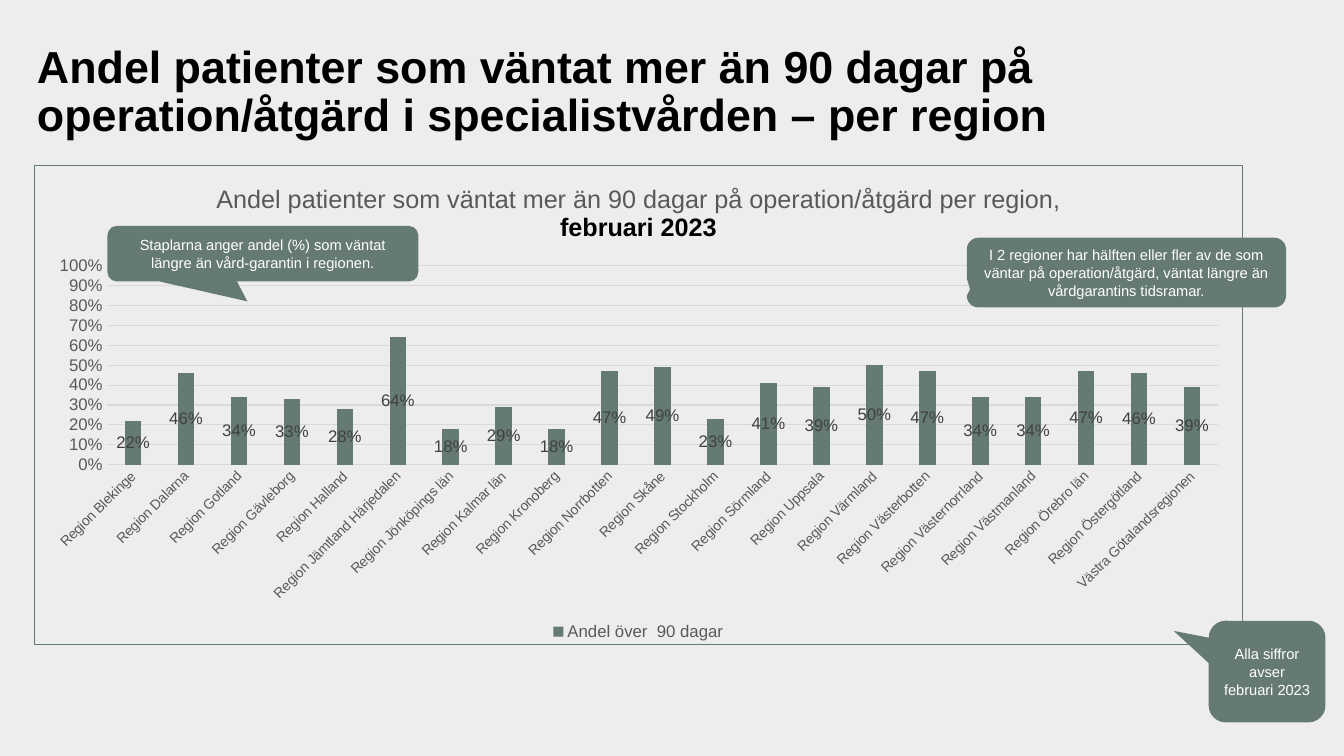
from dataclasses import dataclass

from lxml.etree import SubElement
from pptx import Presentation
from pptx.chart.chart import Chart
from pptx.chart.data import CategoryChartData
from pptx.dml.color import RGBColor
from pptx.enum.chart import XL_CHART_TYPE, XL_LABEL_POSITION, XL_LEGEND_POSITION, XL_TICK_MARK
from pptx.enum.shapes import MSO_SHAPE
from pptx.enum.text import MSO_ANCHOR, PP_ALIGN
from pptx.oxml import parse_xml
from pptx.oxml.ns import nsdecls, qn
from pptx.slide import Slide
from pptx.util import Inches, Pt

COLORS = {
    "background": "EDEDED", "green": "657B71", "grid": "D9D9D9", "axis": "595959",
    "label": "404040", "black": "000000", "white": "FFFFFF",
}
FONT = "Arial"
COLUMNS, ROWS = 160, 90
CELL = Inches(7.5) / ROWS

REGION_SHARES = {
    "Region Blekinge": 0.22, "Region Dalarna": 0.46, "Region Gotland": 0.34,
    "Region Gävleborg": 0.33, "Region Halland": 0.28, "Region Jämtland Härjedalen": 0.64,
    "Region Jönköpings län": 0.18, "Region Kalmar län": 0.29, "Region Kronoberg": 0.18,
    "Region Norrbotten": 0.47, "Region Skåne": 0.49, "Region Stockholm": 0.23,
    "Region Sörmland": 0.41, "Region Uppsala": 0.39, "Region Värmland": 0.5,
    "Region Västerbotten": 0.47, "Region Västernorrland": 0.34, "Region Västmanland": 0.34,
    "Region Örebro län": 0.47, "Region Östergötland": 0.46, "Västra Götalandsregionen": 0.39,
}


@dataclass(frozen=True)
class Box:
    """A place on the slide in grid columns and rows."""
    column: float
    row: float
    width: float
    height: float

    def lengths(self) -> list[int]:
        return [round(value * CELL) for value in (self.column, self.row, self.width, self.height)]


@dataclass(frozen=True)
class Callout:
    box: Box
    tip: tuple[float, float]
    text: str


CALLOUTS = [
    Callout(Box(143.9, 73.9, 13.9, 12.1), (-0.8, -0.4), "Alla siffror avser februari 2023"),
    Callout(Box(115.1, 28.3, 38, 8.3), (-0.49, 0.24),
            "I 2 regioner har hälften eller fler av de som väntar på operation/åtgärd, "
            "väntat längre än vårdgarantins tidsramar."),
    Callout(Box(12.8, 26.9, 37, 6.6), (-0.05, 0.86),
            "Staplarna anger andel (%) som väntat längre än vård-garantin i regionen."),
]


def color(name: str) -> RGBColor:
    return RGBColor.from_string(COLORS[name])


def style_font(font, size: float, color_name: str, bold: bool = False) -> None:
    font.name, font.size, font.bold = FONT, Pt(size), bold
    font.color.rgb = color(color_name)


def add_run(paragraph, text: str, size: float, color_name: str, bold: bool = False) -> None:
    run = paragraph.add_run()
    run.text = text
    style_font(run.font, size, color_name, bold)


def add_title(slide: Slide, box: Box, text: str) -> None:
    frame = slide.shapes.add_textbox(*box.lengths()).text_frame
    frame.word_wrap = True
    frame.vertical_anchor = MSO_ANCHOR.BOTTOM
    frame.margin_left = frame.margin_right = frame.margin_top = frame.margin_bottom = 0
    paragraph = frame.paragraphs[0]
    paragraph.line_spacing = 0.9
    add_run(paragraph, text, 32, "black", bold=True)


def add_callout(slide: Slide, callout: Callout) -> None:
    shape = slide.shapes.add_shape(MSO_SHAPE.ROUNDED_RECTANGULAR_CALLOUT, *callout.box.lengths())
    shape.adjustments[0], shape.adjustments[1] = callout.tip
    shape.shadow.inherit = False
    shape.fill.solid()
    shape.fill.fore_color.rgb = color("green")
    shape.line.fill.background()
    frame = shape.text_frame
    frame.word_wrap = True
    frame.vertical_anchor = MSO_ANCHOR.MIDDLE
    paragraph = frame.paragraphs[0]
    paragraph.alignment = PP_ALIGN.CENTER
    add_run(paragraph, callout.text, 10.5, "white")


def add_border(chart: Chart) -> None:
    border = parse_xml(
        f'<c:spPr {nsdecls("c", "a")}><a:noFill/><a:ln w="{Pt(0.75)}"><a:solidFill>'
        f'<a:srgbClr val="{COLORS["green"]}"/></a:solidFill></a:ln></c:spPr>')
    chart._chartSpace.find(qn("c:chart")).addnext(border)


def place_plot(chart: Chart, shares: dict[str, float]) -> None:
    plot_area = chart._chartSpace.find(qn("c:chart")).find(qn("c:plotArea"))
    for layout in plot_area.findall(qn("c:layout")):
        plot_area.remove(layout)
    layout = parse_xml(f'<c:layout {nsdecls("c")}/>')
    manual = SubElement(layout, qn("c:manualLayout"))
    settings = {"layoutTarget": "inner", "xMode": "edge", "yMode": "edge", **shares}
    for tag, value in settings.items():
        SubElement(manual, qn(f"c:{tag}")).set("val", str(value))
    plot_area.insert(0, layout)


def style_axes(chart: Chart) -> None:
    category_axis, value_axis = chart.category_axis, chart.value_axis
    for axis, size in ((category_axis, 10), (value_axis, 12)):
        axis.major_tick_mark = axis.minor_tick_mark = XL_TICK_MARK.NONE
        style_font(axis.tick_labels.font, size, "axis")
    value_axis.minimum_scale, value_axis.maximum_scale, value_axis.major_unit = 0, 1, 0.1
    value_axis.tick_labels.number_format = "0%"
    value_axis.tick_labels.number_format_is_linked = False
    value_axis.format.line.fill.background()
    for line in (category_axis.format.line, value_axis.major_gridlines.format.line):
        line.color.rgb = color("grid")
        line.width = Pt(0.75)
    body = category_axis._element.find(qn("c:txPr")).find(qn("a:bodyPr"))
    body.set("rot", str(-45 * 60000))
    body.set("vert", "horz")


def add_region_chart(slide: Slide, box: Box) -> None:
    data = CategoryChartData(number_format="0%")
    data.categories = list(REGION_SHARES)
    data.add_series("Andel över  90 dagar", list(REGION_SHARES.values()))
    chart = slide.shapes.add_chart(XL_CHART_TYPE.COLUMN_CLUSTERED, *box.lengths(), data).chart
    style_font(chart.font, 12, "black")

    # Chart title
    title_frame = chart.chart_title.text_frame
    title_line = title_frame.paragraphs[0]
    add_run(title_line, "Andel patienter som väntat mer än 90 dagar på operation/åtgärd per region,",
            18, "axis")
    add_run(title_frame.add_paragraph(), "februari 2023", 18, "black", bold=True)
    chart.chart_title.include_in_layout = False

    # Columns and their labels
    plot = chart.plots[0]
    plot.gap_width, plot.overlap, plot.vary_by_categories = 219, -27, False
    series = plot.series[0]
    series.format.fill.solid()
    series.format.fill.fore_color.rgb = color("green")
    labels = series.data_labels
    labels.show_value = True
    labels.position = XL_LABEL_POSITION.CENTER
    labels.number_format, labels.number_format_is_linked = "0%", False
    style_font(labels.font, 12, "label")

    # Axes, legend and frame
    style_axes(chart)
    chart.has_legend = True
    chart.legend.position = XL_LEGEND_POSITION.BOTTOM
    chart.legend.include_in_layout = False
    style_font(chart.legend.font, 12, "axis")
    place_plot(chart, {"x": 0.06, "y": 0.21, "w": 0.92, "h": 0.415})
    add_border(chart)


def main() -> None:
    presentation = Presentation()
    presentation.slide_width = round(COLUMNS * CELL)
    presentation.slide_height = round(ROWS * CELL)
    slide = presentation.slides.add_slide(presentation.slide_layouts[6])
    slide.background.fill.solid()
    slide.background.fill.fore_color.rgb = color("background")

    add_region_chart(slide, Box(4, 19.6, 144, 57.2))
    add_title(slide, Box(4.4, 2.3, 130.7, 14.5),
              "Andel patienter som väntat mer än 90 dagar på operation/åtgärd "
              "i specialistvården – per region")
    for callout in CALLOUTS:
        add_callout(slide, callout)
    presentation.save("out.pptx")


if __name__ == "__main__":
    main()
